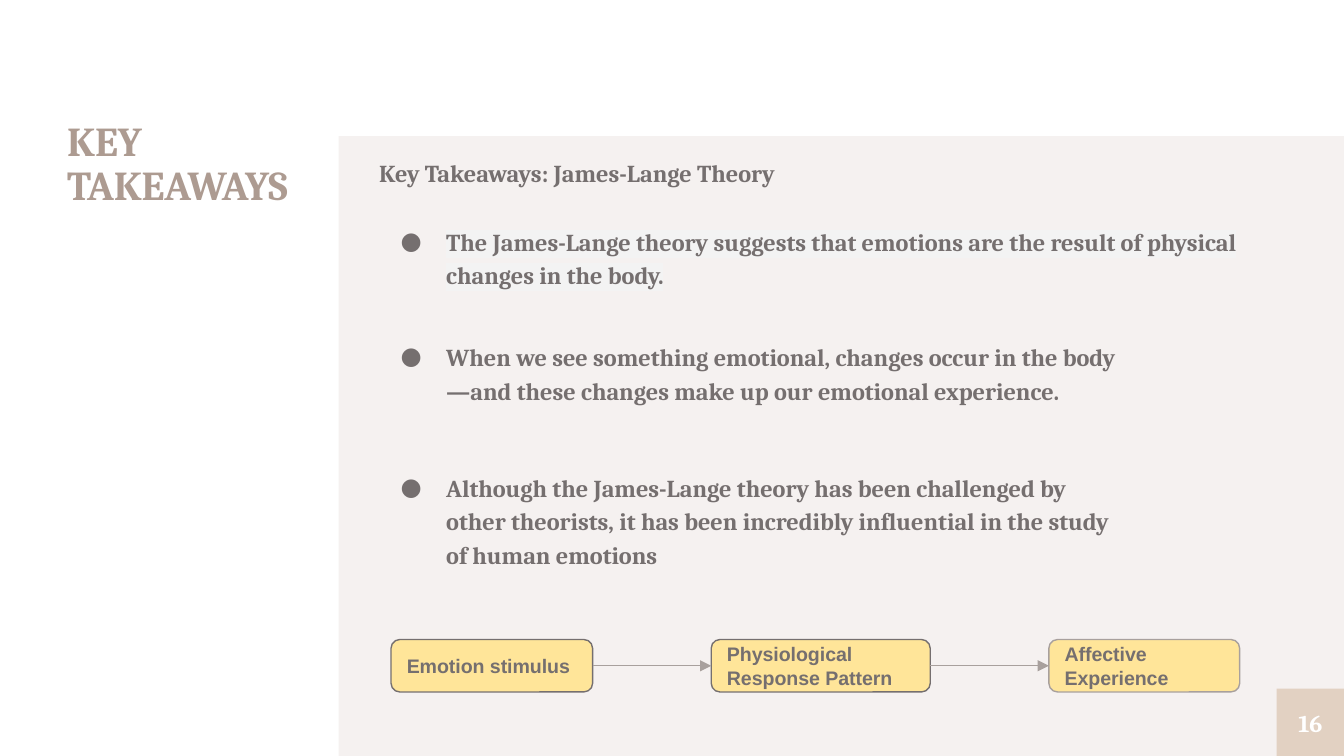
from dataclasses import dataclass

from lxml.etree import SubElement
from pptx import Presentation
from pptx.dml.color import RGBColor
from pptx.enum.shapes import MSO_CONNECTOR as Link, MSO_SHAPE as Shape
from pptx.enum.text import MSO_ANCHOR as Anchor, MSO_AUTO_SIZE as Fit, PP_ALIGN as Align
from pptx.oxml.ns import qn
from pptx.util import Inches, Pt

WIDE = Inches(10)
HIGH = WIDE * 9 // 16
INK, GREY, YELLOW = "756F6F", "A8A09D", "FFE599"


@dataclass
class Box:
    """Place and size in percent of the slide."""
    left: float
    top: float
    wide: float
    high: float

    def emu(self) -> tuple:
        return (int(WIDE * self.left / 100), int(HIGH * self.top / 100),
                int(WIDE * self.wide / 100), int(HIGH * self.high / 100))


@dataclass
class Point:
    text: str
    before: float
    right: float = 0
    mark: str = ""


@dataclass
class Step:
    text: str
    wide: float
    edge: str = INK


POINTS = [
    Point("The James-Lange theory suggests that emotions are the result of "
          "physical changes in the body.", 18.8, mark="F3F3F3"),
    Point("When we see something emotional, changes occur in the body—and "
          "these changes make up our emotional experience.", 26, 0.94),
    Point("Although the James-Lange theory has been challenged by other "
          "theorists, it has been incredibly influential in the study of "
          "human emotions", 34, 0.94),
]
STEPS = [
    Step("Emotion stimulus", 15),
    Step("Physiological Response Pattern", 16.3),
    Step("Affective Experience", 14.2, GREY),
]


def rgb(code: str) -> RGBColor:
    return RGBColor.from_string(code)


def style(para, size: float, color: str, face: str = "Cambria") -> None:
    for run in para.runs:
        font = run.font
        font.name, font.size, font.bold = face, Pt(size), True
        font.color.rgb = rgb(color)


def setup(frame, pad: float = 0, anchor=Anchor.TOP) -> None:
    frame.word_wrap, frame.auto_size = True, Fit.NONE
    frame.vertical_anchor = anchor
    frame.margin_left = frame.margin_right = Inches(pad)
    frame.margin_top = frame.margin_bottom = Inches(pad)


def block(slide, box: Box, fill: str, kind=Shape.RECTANGLE, edge: str = ""):
    shape = slide.shapes.add_shape(kind, *box.emu())
    shape.shadow.inherit = False
    shape.fill.solid()
    shape.fill.fore_color.rgb = rgb(fill)
    if edge:
        shape.line.color.rgb = rgb(edge)
        shape.line.width = Pt(0.75)
    else:
        shape.line.fill.background()
    return shape


def bullet(para, point: Point) -> None:
    para.text = point.text
    para.line_spacing, para.space_before = 1.15, Pt(point.before)
    style(para, 13, INK)
    props = para._p.get_or_add_pPr()
    props.set("marL", str(Inches(0.5)))
    props.set("marR", str(Inches(point.right)))
    props.set("indent", str(Inches(-0.34)))
    tint = SubElement(props, qn("a:buClr"))
    SubElement(tint, qn("a:srgbClr"), val=INK)
    SubElement(props, qn("a:buFont"), typeface="Cambria")
    SubElement(props, qn("a:buChar"), char="●")
    if point.mark:
        font = para.runs[0]._r.get_or_add_rPr()
        light = SubElement(font, qn("a:highlight"))
        SubElement(light, qn("a:srgbClr"), val=point.mark)
        font.find(qn("a:solidFill")).addnext(light)


def arrow(slide, start, end) -> None:
    line = slide.shapes.add_connector(Link.STRAIGHT, 0, 0, 0, 0)
    line.begin_connect(start, 3)
    line.end_connect(end, 1)
    line.line.color.rgb = rgb(GREY)
    line.line.width = Pt(0.75)
    SubElement(line.line._get_or_add_ln(), qn("a:tailEnd"), type="triangle")
    SubElement(line._element.spPr, qn("a:effectLst"))


def flow(slide, left: float, top: float, high: float, gap: float) -> None:
    last = None
    for step in STEPS:
        shape = block(slide, Box(left, top, step.wide, high), YELLOW,
                      Shape.ROUNDED_RECTANGLE, step.edge)
        setup(shape.text_frame, 0.1, Anchor.MIDDLE)
        shape.text_frame.text = step.text
        para = shape.text_frame.paragraphs[0]
        para.alignment = Align.LEFT
        style(para, 10.5, INK, "Arial")
        if last is not None:
            arrow(slide, last, shape)
        last = shape
        left += step.wide + gap


def main() -> None:
    deck = Presentation()
    deck.slide_width, deck.slide_height = WIDE, HIGH
    slide = deck.slides.add_slide(deck.slide_layouts[5])

    # Panel
    block(slide, Box(25.2, 18, 74.8, 82), "F5F1F0")

    # Title
    title = slide.shapes.title
    title.left, title.top, title.width, title.height = Box(5, 16, 19.1, 75.2).emu()
    setup(title.text_frame)
    title.text_frame.text = "KEY TAKEAWAYS"
    para = title.text_frame.paragraphs[0]
    para.alignment, para.line_spacing = Align.LEFT, 0.9
    style(para, 22, "AD9B91")

    # Heading and bullets
    body = slide.shapes.add_textbox(*Box(28.2, 20.2, 64.8, 64.4).emu()).text_frame
    setup(body)
    body.text = "Key Takeaways: James-Lange Theory"
    body.paragraphs[0].line_spacing = 1.2
    style(body.paragraphs[0], 13, INK)
    for point in POINTS:
        bullet(body.add_paragraph(), point)

    # Page number
    badge = block(slide, Box(95, 91.11, 5, 8.89), "E2D1C2")
    setup(badge.text_frame, 0, Anchor.MIDDLE)
    badge.text_frame.text = "16"
    badge.text_frame.paragraphs[0].alignment = Align.CENTER
    style(badge.text_frame.paragraphs[0], 13, "FFFFFF")

    # Process from stimulus to experience
    flow(slide, 29.1, 84.6, 6.94, 8.82)

    deck.save("out.pptx")


if __name__ == "__main__":
    main()
